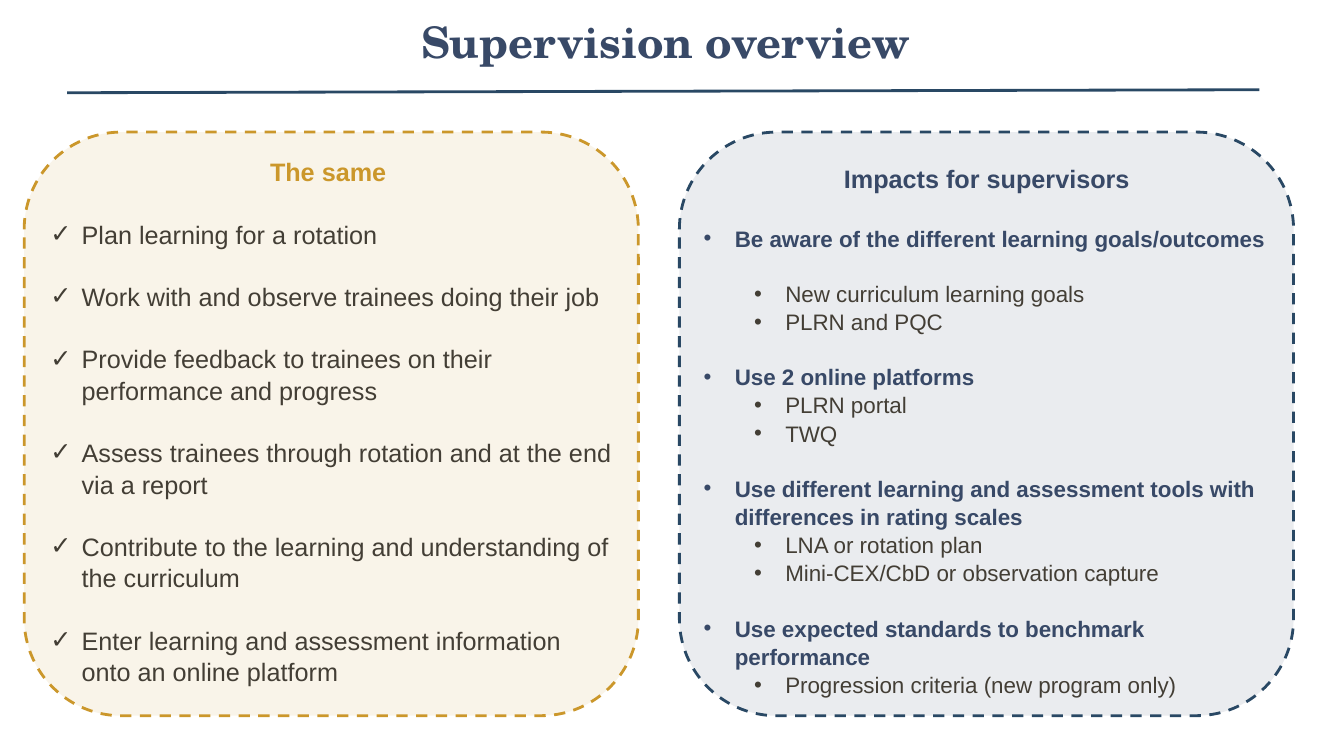
from pptx import Presentation
from pptx.dml.color import RGBColor as Rgb
from pptx.enum.dml import MSO_LINE as Dash
from pptx.enum.shapes import MSO_CONNECTOR as Conn, MSO_SHAPE as Kind
from pptx.enum.text import MSO_ANCHOR as Anchor, MSO_AUTO_SIZE as Fit, PP_ALIGN as Align
from pptx.oxml.ns import qn
from pptx.util import Inches, Pt
from lxml.etree import SubElement as Sub

WIDE, HIGH = Inches(13.33), Inches(7.5)
HUES = {"gold": "CB972B", "navy": "384967", "teal": "294864", "text": "433E35"}
SAME = [
    "Plan learning for a rotation",
    "Work with and observe trainees doing their job",
    "Provide feedback to trainees on their performance and progress",
    "Assess trainees through rotation and at the end via a report",
    "Contribute to the learning and understanding of the curriculum",
    "Enter learning and assessment information onto an online platform",
]
IMPACTS = [
    ("Be aware of the different learning goals/outcomes",
     ["New curriculum learning goals", "PLRN and PQC"]),
    ("Use 2 online platforms", ["PLRN portal", "TWQ"]),
    ("Use different learning and assessment tools with differences in rating scales",
     ["LNA or rotation plan", "Mini-CEX/CbD or observation capture"]),
    ("Use expected standards to benchmark performance",
     ["Progression criteria (new program only)"]),
]


def hue(name):
    """Return the named colour."""
    return Rgb.from_string(HUES[name])


def area(left, top, wide, high):
    """Turn percentages of the slide into lengths."""
    return [int(part * side / 100)
            for part, side in zip((left, top, wide, high), (WIDE, HIGH) * 2)]


def place(shape, *box):
    """Move a placeholder to a box given in percent."""
    shape.left, shape.top, shape.width, shape.height = area(*box)


def style(para, size, tint, bold=False, face="Arial"):
    """Set the font of a paragraph."""
    font = para.font
    font.name, font.size, font.bold = face, Pt(size), bold
    font.color.rgb = hue(tint)


def panel(slide, left, fill, line):
    """Draw a dashed rounded panel behind the text."""
    shape = slide.shapes.add_shape(Kind.ROUNDED_RECTANGLE, *area(left, 17.47, 45.7, 77.2))
    shape.shadow.inherit = False
    shape.fill.solid()
    shape.fill.fore_color.rgb = hue(fill)
    tone = shape.fill._xPr.find(qn("a:solidFill"))[0]
    Sub(tone, qn("a:alpha"), val="10000")
    shape.line.color.rgb = hue(line)
    shape.line.width = Pt(2)
    shape.line.dash_style = Dash.DASH
    slide.shapes._spTree.insert(2, shape._element)


def rule(slide):
    """Draw the line below the title."""
    x, y, right, end = area(5, 12.27, 93.7, 11.87)
    line = slide.shapes.add_connector(Conn.STRAIGHT, x, y, right, end)
    line.line.color.rgb = hue("teal")
    line.line.width = Pt(2)
    Sub(line._element.spPr, qn("a:effectLst"))


def entry(frame, text, mark, size, tint, bold=False, level=0, gap=0):
    """Add a paragraph with a hanging bullet, or a centred heading without one."""
    para = frame.add_paragraph() if frame.text else frame.paragraphs[0]
    para.text, para.level = text, level
    para.line_spacing, para.space_before, para.space_after = 1.05, Pt(gap), Pt(0)
    para.alignment = Align.LEFT if mark else Align.CENTER
    props = para._p.get_or_add_pPr()
    hang = Inches(0.31) if mark else 0
    props.set("marL", str(hang + level * Inches(0.5)))
    props.set("indent", str(-hang))
    if mark:
        Sub(props, qn("a:buFont"), typeface="Arial")
        Sub(props, qn("a:buChar"), char=mark)
    else:
        Sub(props, qn("a:buNone"))
    style(para, size, tint, bold)


def column(shape, head, tint, *box):
    """Prepare a list placeholder with its heading."""
    place(shape, *box)
    frame = shape.text_frame
    frame.word_wrap, frame.auto_size = True, Fit.NONE
    frame.vertical_anchor = Anchor.TOP
    entry(frame, head, None, 18, tint, True)
    return frame


def main():
    """Build and save the slide."""
    deck = Presentation()
    deck.slide_width, deck.slide_height = WIDE, HIGH
    slide = deck.slides.add_slide(deck.slide_layouts[3])
    title, left, right = list(slide.placeholders)[:3]

    place(title, 5, 0.53, 90, 9.73)
    title.text_frame.text = "Supervision overview "
    title.text_frame.vertical_anchor = Anchor.MIDDLE
    para = title.text_frame.paragraphs[0]
    para.alignment = Align.CENTER
    style(para, 31, "navy", True, "TeX Gyre Schola")
    rule(slide)
    panel(slide, 1.8, "gold", "gold")
    panel(slide, 50.55, "navy", "teal")

    frame = column(left, "The same ", "gold", 3, 19.87, 43.35, 70)
    for text in SAME:
        entry(frame, text, "✓", 18, "text", gap=21.7)

    frame = column(right, "Impacts for supervisors", "navy", 51.6, 20.67, 43.65, 70.93)
    for row, (head, points) in enumerate(IMPACTS):
        entry(frame, head, "•", 16, "navy", True, gap=19.3 if row else 21.7)
        for spot, text in enumerate(points):
            entry(frame, text, "•", 16, "text", level=1, gap=0 if row or spot else 19.3)
    deck.save("out.pptx")


if __name__ == "__main__":
    main()
